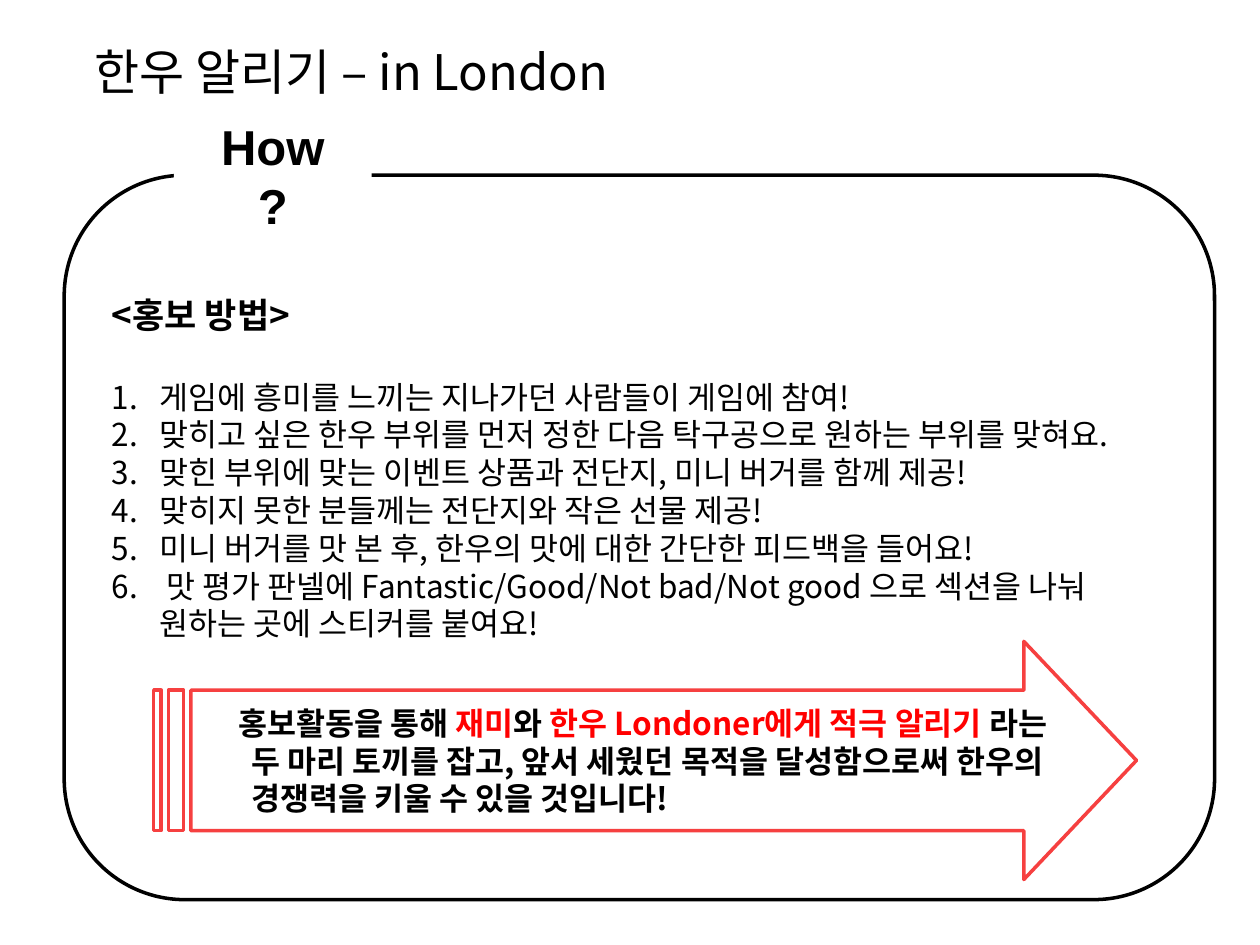
"""Build the promotion method slide for the London beef campaign."""
from lxml import etree
from pptx import Presentation
from pptx import util as u
from pptx.dml import color
from pptx.enum import shapes, text
from pptx.oxml import ns

KOREAN, LATIN = "Noto Sans CJK KR", "Arial"
BLACK, WHITE, RED, CORAL = "000000", "FFFFFF", "FF0000", "F64040"
HANG = 0.38


def rgb(value):
    return color.RGBColor.from_string(value)


class SlideStyle:
    def __init__(self, slide):
        self.slide = slide

    def run(self, paragraph, words, size, bold=False, tint=BLACK, face=KOREAN):
        run = paragraph.add_run()
        run.text = words
        run.font.size = u.Pt(size)
        run.font.bold = bold
        run.font.name = face
        run.font.color.rgb = rgb(tint)
        east = etree.SubElement(run.font._element, ns.qn("a:ea"))
        east.set("typeface", face)

    def title(self, words, box):
        heading = self.slide.shapes.title
        heading.left, heading.top, heading.width, heading.height = map(u.Inches, box)
        frame = heading.text_frame
        frame.vertical_anchor = text.MSO_ANCHOR.MIDDLE
        frame.paragraphs[0].alignment = text.PP_ALIGN.LEFT
        self.run(frame.paragraphs[0], words, 28)

    def panel(self, kind, box, outline=None):
        panel = self.slide.shapes.add_shape(kind, *map(u.Inches, box))
        panel.shadow.inherit = False
        panel.fill.solid()
        panel.fill.fore_color.rgb = rgb(WHITE)
        if outline:
            panel.line.color.rgb = rgb(outline)
            panel.line.width = u.Pt(2)
        else:
            panel.line.fill.background()
        panel.text_frame.word_wrap = True
        panel.text_frame.vertical_anchor = text.MSO_ANCHOR.MIDDLE
        return panel

    def paragraph(self, frame, spacing, first=False):
        paragraph = frame.paragraphs[0] if first else frame.add_paragraph()
        paragraph.alignment = text.PP_ALIGN.LEFT
        paragraph.line_spacing = u.Pt(spacing)
        return paragraph

    def indent(self, paragraph, left, hanging):
        properties = paragraph._p.get_or_add_pPr()
        properties.set("marL", str(u.Inches(left)))
        properties.set("indent", str(-u.Inches(hanging)))
        return properties

    def numbered(self, frame, steps, gap):
        for index, step in enumerate(steps):
            paragraph = self.paragraph(frame, 21.6)
            if index == 0:
                paragraph.space_before = u.Pt(gap)
            properties = self.indent(paragraph, HANG, HANG)
            etree.SubElement(properties, ns.qn("a:buFont")).set("typeface", KOREAN)
            etree.SubElement(properties, ns.qn("a:buAutoNum")).set("type", "arabicPeriod")
            self.run(paragraph, step, 18)


def main():
    deck = Presentation()
    deck.slide_width, deck.slide_height = u.Inches(10), u.Inches(7.5)
    style = SlideStyle(deck.slides.add_slide(deck.slide_layouts[5]))
    style.title("한우 알리기 – in London", (0.65, 0.15, 8.66, 0.83))

    method = style.panel(shapes.MSO_SHAPE.ROUNDED_RECTANGLE, (0.51, 1.39, 9.13, 5.75), BLACK).text_frame
    method.vertical_anchor = text.MSO_ANCHOR.TOP
    method.margin_top = u.Inches(0.66)
    style.run(style.paragraph(method, 24, first=True), "<홍보 방법>", 20, bold=True)
    style.numbered(method, (
        "게임에 흥미를 느끼는 지나가던 사람들이 게임에 참여!",
        "맞히고 싶은 한우 부위를 먼저 정한 다음 탁구공으로 원하는 부위를 맞혀요.",
        "맞힌 부위에 맞는 이벤트 상품과 전단지, 미니 버거를 함께 제공!",
        "맞히지 못한 분들께는 전단지와 작은 선물 제공!",
        "미니 버거를 맛 본 후, 한우의 맛에 대한 간단한 피드백을 들어요!",
        " 맛 평가 판넬에 Fantastic/Good/Not bad/Not good 으로 섹션을 나눠 원하는 곳에 스티커를 붙여요!",
    ), gap=24)

    question = style.panel(shapes.MSO_SHAPE.OVAL, (1.38, 0.92, 1.57, 0.94)).text_frame.paragraphs[0]
    question.alignment = text.PP_ALIGN.CENTER
    style.run(question, "How?", 28, bold=True, face=LATIN)

    arrow = style.panel(shapes.MSO_SHAPE.STRIPED_RIGHT_ARROW, (1.22, 5.09, 7.8, 1.89), CORAL)
    arrow.adjustments[0], arrow.adjustments[1] = 0.59, 0.473
    goal = style.paragraph(arrow.text_frame, 21.6, first=True)
    style.indent(goal, HANG, 0.1)
    for words, tint in (
        ("홍보활동을 통해 ", BLACK),
        ("재미", RED),
        ("와 ", BLACK),
        ("한우 Londoner에게 적극 알리기 ", RED),
        ("라는 두 마리 토끼를 잡고, 앞서 세웠던 목적을 달성함으로써 한우의 경쟁력을 키울 수 있을 것입니다!", BLACK),
    ):
        style.run(goal, words, 18, bold=True, tint=tint)

    deck.save("out.pptx")


if __name__ == "__main__":
    main()
